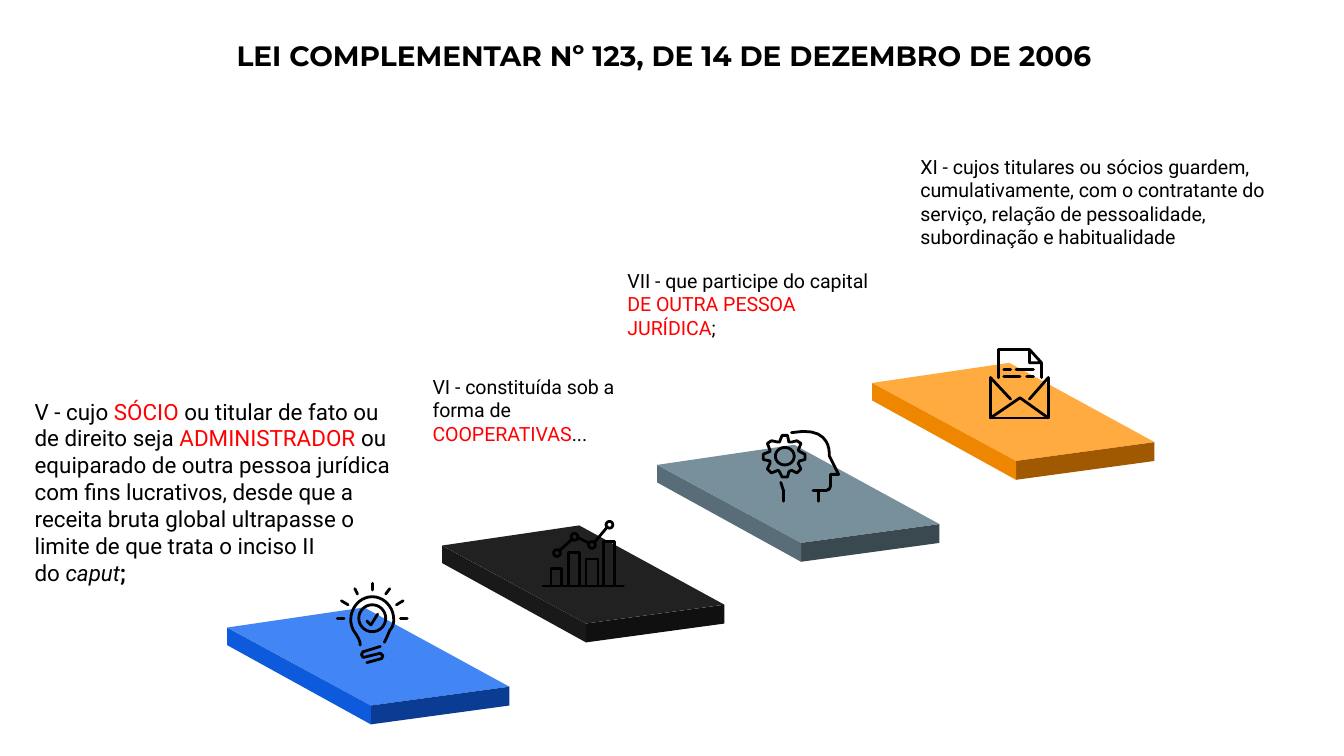
from dataclasses import dataclass
import math

import pptx
import pptx.dml.color
import pptx.enum.text
import pptx.oxml.ns
import pptx.util

PX = 9144
BLACK, RED = "000000", "FF0000"
NBSP = chr(160)
Points = list[tuple[float, float]]


@dataclass
class Stroke:
    points: Points
    closed: bool = False


@dataclass
class Step:
    top: str
    right: str
    left: str


@dataclass
class Run:
    text: str
    color: str = BLACK
    bold: bool = False
    italic: bool = False


@dataclass
class Label:
    x: int
    y: int
    w: int
    h: int
    size: float
    runs: list[Run]


def px(n: float) -> pptx.util.Emu:
    return pptx.util.Emu(round(n * PX))


def rgb(color: str) -> pptx.dml.color.RGBColor:
    return pptx.dml.color.RGBColor.from_string(color)


def line(*points: tuple[float, float]) -> Stroke:
    return Stroke(list(points))


def loop(*points: tuple[float, float]) -> Stroke:
    return Stroke(list(points), True)


def rect(x: int, y: int, w: int, h: int) -> Stroke:
    return loop((x, y), (x + w, y), (x + w, y + h), (x, y + h))


def ring(x: int, y: int, w: int, h: int) -> Stroke:
    angles = [math.tau * i / 32 for i in range(32)]
    return loop(*((x + w / 2 * (1 + math.cos(a)), y + h / 2 * (1 + math.sin(a))) for a in angles))


def curve(*knots: tuple[float, float]) -> Points:
    points = [knots[0]]
    for i in range(0, len(knots) - 1, 3):
        for t in (n / 10 for n in range(1, 11)):
            weights = ((1 - t) ** 3, 3 * t * (1 - t) ** 2, 3 * t * t * (1 - t), t ** 3)
            points.append(tuple(sum(w * k[axis] for w, k in zip(weights, knots[i:i + 4])) for axis in (0, 1)))
    return points


def draw_outline(shapes, strokes: list[Stroke]):
    builder = None
    for stroke in strokes:
        start, *rest = [(px(x), px(y)) for x, y in stroke.points]
        if builder is None:
            builder = shapes.build_freeform(*start, scale=1.0)
        else:
            builder.move_to(*start)
        builder.add_line_segments(rest, close=stroke.closed)
    sp = builder.convert_to_shape()
    sp.shadow.inherit = False
    return sp


def draw_step(s, x: int, y: int, step: Step) -> None:
    back_left, back, right, front = (0, 15), (102, 0), (210, 59), (107, 73)
    left_low, right_low, front_low = (0, 28), (210, 73), (107, 87)
    faces = [
        (step.top, [front, back_left, back, right]),
        (step.right, [right, right_low, front_low, front]),
        (step.left, [front_low, left_low, back_left, front]),
    ]
    group = s.shapes.add_group_shape()
    for color, corners in faces:
        sp = draw_outline(group.shapes, [loop(*((x + dx, y + dy) for dx, dy in corners))])
        sp.fill.solid()
        sp.fill.fore_color.rgb = rgb(color)
        sp.line.fill.background()


def draw_icon(s, strokes: list[Stroke]) -> None:
    sp = draw_outline(s.shapes, strokes)
    sp.fill.background()
    sp.line.color.rgb = rgb(BLACK)
    sp.line.width = pptx.util.Pt(1.5)
    sp.element.spPr.find(pptx.oxml.ns.qn("a:ln")).set("cap", "rnd")


def write_label(sp, label: Label, font: str) -> None:
    sp.left, sp.top, sp.width, sp.height = map(px, (label.x, label.y, label.w, label.h))
    tf = sp.text_frame
    tf.word_wrap = True
    tf.auto_size = pptx.enum.text.MSO_AUTO_SIZE.SHAPE_TO_FIT_TEXT
    tf.vertical_anchor = pptx.enum.text.MSO_ANCHOR.TOP
    p = tf.paragraphs[0]
    p.alignment = pptx.enum.text.PP_ALIGN.LEFT
    for run in label.runs:
        r = p.add_run()
        r.text = run.text
        r.font.name = font
        r.font.size = pptx.util.Pt(label.size)
        r.font.bold = run.bold
        r.font.italic = run.italic
        r.font.color.rgb = rgb(run.color)


STEPS = [
    Step("4285F4", "093C92", "0D5BDC"),
    Step("212121", "101010", "191919"),
    Step("78909C", "3A4950", "586D77"),
    Step("FFAB40", "A05900", "EF8600"),
]

BULB = [
    Stroke(curve((268, 480), (268, 477), (267, 475), (263, 469), (262, 467), (261, 464), (261, 461),
                 (261, 452), (268, 444), (277, 444), (286, 444), (293, 452), (293, 461),
                 (293, 464), (292, 467), (290, 469), (288, 474), (287, 476), (286, 478))),
    ring(267, 450, 20, 20),
    line((273, 462), (276, 465), (281, 457)),
    line((277, 439), (277, 434)),
    line((266, 442), (264, 438)),
    line((254, 447), (259, 450)),
    line((251, 460), (256, 460)),
    line((290, 438), (287, 442)),
    line((300, 447), (295, 450)),
    line((298, 460), (303, 460)),
    line((283, 481), (270, 485), (269, 487), (270, 489), (271, 489),
         (283, 486), (285, 488), (284, 490), (273, 493)),
]

CHART = [
    line((464, 436), (404, 436)),
    *(rect(x, y, w, 436 - y) for x, y, w in ((410, 423, 8), (423, 411, 8), (436, 416, 9), (449, 403, 8))),
    *(ring(x, y, 5, 5) for x, y in ((412, 409), (425, 397), (438, 403), (451, 388))),
    line((442, 404), (452, 392)),
    line((430, 400), (438, 404)),
    line((426, 401), (416, 410)),
]

HEAD = [
    Stroke(curve((589, 322), (620, 316), (617, 339), (617, 339))
           + [(624, 353), (618, 353), (618, 362), (617, 364), (615, 365), (609, 365), (609, 373)]),
    line((583, 373), (583, 365), (581, 359)),
    loop((599, 342), (599, 338), (595, 336), (594, 335), (596, 330), (593, 328), (589, 329), (587, 329),
         (586, 324), (582, 324), (580, 329), (579, 329), (574, 328), (571, 330), (573, 335), (573, 336),
         (568, 338), (568, 342), (573, 343), (573, 345), (571, 349), (574, 352), (579, 350), (580, 351),
         (582, 355), (586, 355), (587, 351), (589, 350), (593, 352), (596, 349), (594, 345), (595, 343)),
    ring(577, 333, 14, 13),
    line((609, 365), (605, 365)),
]

ENVELOPE = [
    line((780, 281), (780, 311), (737, 311), (737, 281)),
    line((780, 311), (759, 296), (737, 311)),
    line((780, 281), (766, 297)),
    line((737, 281), (752, 297)),
    line((775, 281), (775, 270), (766, 260), (766, 270), (775, 270)),
    line((766, 260), (743, 260), (743, 281)),
    *(line((x1, y), (x2, y)) for x1, x2, y in ((747, 752, 275), (756, 769, 275), (747, 759, 280), (764, 769, 280))),
]

TITLE = Label(166, 24, 740, 35, 15, [Run("LEI COMPLEMENTAR Nº 123, DE 14 DE DEZEMBRO DE 2006", bold=True)])
LABELS = [
    Label(16, 291, 296, 151, 12, [
        Run("V - cujo "), Run("SÓCIO ", RED), Run("ou titular de fato ou de direito seja "),
        Run("ADMINISTRADOR", RED),
        Run(" ou equiparado de outra pessoa jurídica com fins lucrativos, desde que a receita bruta "
            f"global ultrapasse o limite de que trata o inciso II do{NBSP}"),
        Run("caput", italic=True), Run(";", bold=True)]),
    Label(312, 274, 178, 63, 10.5, [
        Run("VI - constituída sob a forma de "), Run("COOPERATIVAS", RED), Run("...")]),
    Label(457, 195, 201, 63, 10.5, [
        Run("VII - que participe do capital "), Run("DE OUTRA PESSOA JURÍDICA", RED), Run(";")]),
    Label(675, 110, 306, 81, 10.5, [
        Run(f"XI{NBSP}-{NBSP}cujos titulares ou sócios guardem, cumulativamente, com o contratante do "
            "serviço, relação de pessoalidade, subordinação e habitualidade")]),
]


def main() -> None:
    prs = pptx.Presentation()
    prs.slide_width = px(1000)
    prs.slide_height = prs.slide_width * 9 // 16
    s = prs.slides.add_slide(prs.slide_layouts[5])
    write_label(s.shapes.title, TITLE, "Montserrat")
    for i, step in enumerate(STEPS):
        draw_step(s, 169 + 160 * i, round(452 - 60.67 * i), step)
    for icon in (BULB, HEAD, CHART, ENVELOPE):
        draw_icon(s, icon)
    for label in LABELS:
        write_label(s.shapes.add_textbox(0, 0, 0, 0), label, "Roboto")
    prs.save("out.pptx")


if __name__ == "__main__":
    main()
